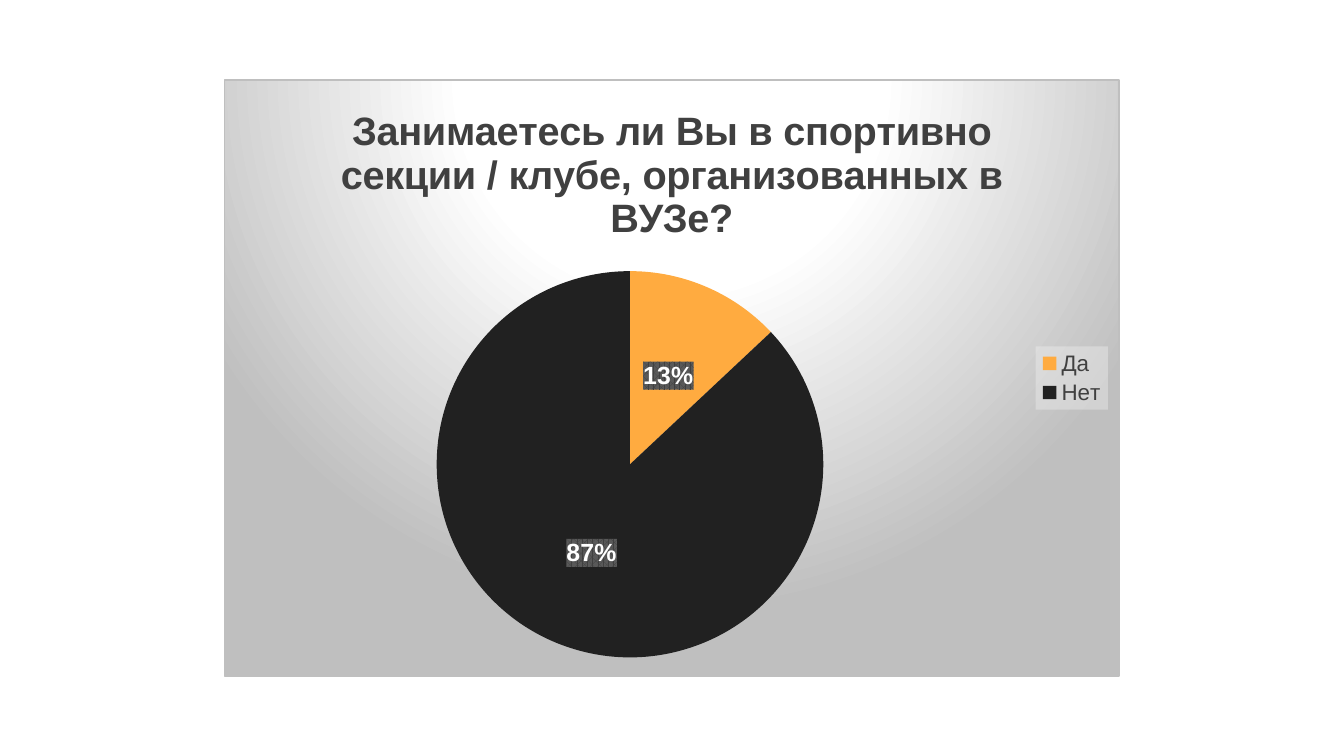
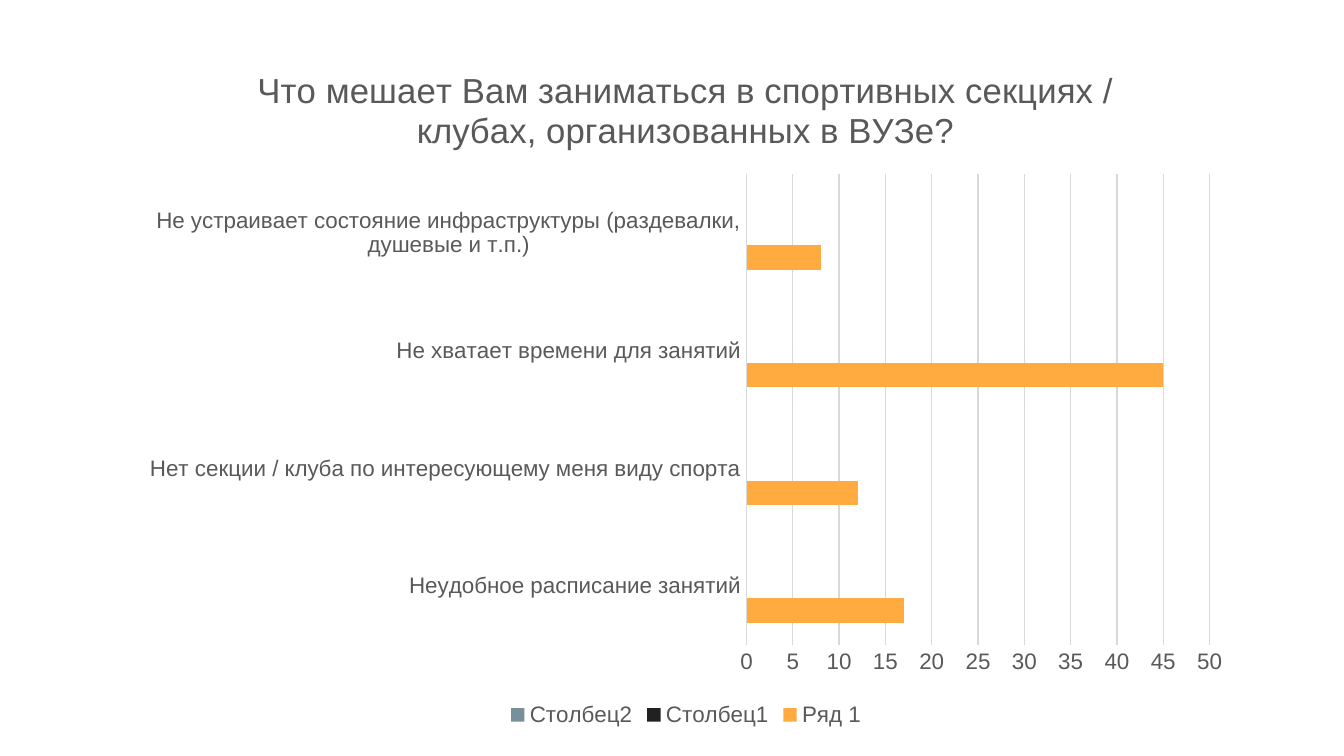
from dataclasses import dataclass

from pptx import Presentation, oxml
from pptx.chart import data
from pptx.dml.color import RGBColor
from pptx.enum import chart as kinds
from pptx.util import Cm, Pt


@dataclass(frozen=True)
class Theme:
    font: str = "Arial"
    gold: str = "FFAB40"
    ink: str = "212121"
    slate: str = "78909C"
    white: str = "FFFFFF"
    dark: str = "404040"
    gray: str = "595959"
    rule: str = "D9D9D9"
    edge: str = "BFBFBF"
    pale: str = "F2F2F2"
    base: float = 10
    text: float = 12
    label: float = 13.3
    head: float = 18.6
    bold: float = 21.3


THEME = Theme()
SPACE = 'xmlns:{0}="http://schemas.openxmlformats.org/drawingml/2006/{1}"'
NAMES = " ".join(SPACE.format(*pair) for pair in (("a", "main"), ("c", "chart")))


def rgb(tint):
    return RGBColor.from_string(tint)


def style(font, size, tint, bold=False):
    font.name = THEME.font
    font.size = Pt(size)
    font.bold = bold
    font.color.rgb = rgb(tint)


def paint(fill, tint):
    fill.solid()
    fill.fore_color.rgb = rgb(tint)


def hue(tint, alpha=100):
    return f'<a:srgbClr val="{tint}"><a:alpha val="{alpha * 1000}"/></a:srgbClr>'


def back(chart, query, fill, line="<a:ln><a:noFill/></a:ln>"):
    node = chart.element.xpath(query)[0]
    node.addprevious(oxml.parse_xml(f"<c:spPr {NAMES}>{fill}{line}</c:spPr>"))


def add_chart(slide, kind, box, cats, rows, title, size, tint, bold, place):
    source = data.CategoryChartData()
    source.categories = cats
    for name, vals in rows:
        source.add_series(name, vals)
    chart = slide.shapes.add_chart(kind, *map(Cm, box), source).chart
    style(chart.font, THEME.base, "000000")
    chart.has_title = True
    chart.chart_title.include_in_layout = False
    frame = chart.chart_title.text_frame
    frame.text = title
    style(frame.paragraphs[0].runs[0].font, size, tint, bold)
    chart.has_legend = True
    chart.legend.position = place
    chart.legend.include_in_layout = False
    style(chart.legend.font, THEME.text, tint)
    return chart


def add_pie(slide, box):
    chart = add_chart(
        slide, kinds.XL_CHART_TYPE.PIE, box, ["Да", "Нет"],
        [("Series 1", [13, 87])],
        "Занимаетесь ли Вы в спортивно секции / клубе, организованных в ВУЗе?",
        THEME.bold, THEME.dark, True, kinds.XL_LEGEND_POSITION.RIGHT)
    plot = chart.plots[0]
    plot.vary_by_categories = True
    row = plot.series[0]
    for spot, tint in enumerate((THEME.gold, THEME.ink)):
        paint(row.points[spot].format.fill, tint)
    labels = row.data_labels
    labels.show_value = False
    labels.show_percentage = True
    labels.position = kinds.XL_LABEL_POSITION.CENTER
    style(labels.font, THEME.label, THEME.white, True)

    stops = "".join(
        f'<a:gs pos="{spot * 1000}">{hue(tint)}</a:gs>'
        for spot, tint in ((0, THEME.white), (39, THEME.white), (100, THEME.edge)))
    glow = (f'<a:gradFill><a:gsLst>{stops}</a:gsLst><a:path path="circle">'
            '<a:fillToRect l="50000" t="-80000" r="50000" b="180000"/>'
            '</a:path></a:gradFill>')
    line = (f'<a:ln w="{Pt(0.75)}"><a:solidFill>{hue(THEME.edge)}'
            '</a:solidFill></a:ln>')
    mesh = (f'<a:pattFill prst="pct75"><a:fgClr>{hue(THEME.dark)}</a:fgClr>'
            f'<a:bgClr>{hue(THEME.gray)}</a:bgClr></a:pattFill>')
    veil = f"<a:solidFill>{hue(THEME.pale, 39)}</a:solidFill>"
    back(chart, "./c:txPr", glow, line)
    back(chart, ".//c:ser/c:dLbls/c:txPr", mesh)
    back(chart, ".//c:legend/c:txPr", veil)


def add_bars(slide, box):
    cats = [
        "Неудобное расписание занятий",
        "Нет секции / клуба по интересующему меня виду спорта",
        "Не хватает времени для занятий",
        "Не устраивает состояние инфраструктуры (раздевалки, душевые и т.п.)",
    ]
    void = [None] * len(cats)
    chart = add_chart(
        slide, kinds.XL_CHART_TYPE.BAR_CLUSTERED, box, cats,
        [("Ряд 1", [17, 12, 45, 8]), ("Столбец1", void), ("Столбец2", void)],
        "Что мешает Вам заниматься в спортивных секциях / клубах, "
        "организованных в ВУЗе?",
        THEME.head, THEME.gray, False, kinds.XL_LEGEND_POSITION.BOTTOM)
    plot = chart.plots[0]
    plot.gap_width = 182
    plot.vary_by_categories = False
    for row, tint in zip(plot.series, (THEME.gold, THEME.ink, THEME.slate)):
        paint(row.format.fill, tint)
    side, scale = chart.category_axis, chart.value_axis
    for axis in (side, scale):
        axis.major_tick_mark = kinds.XL_TICK_MARK.NONE
        axis.minor_tick_mark = kinds.XL_TICK_MARK.NONE
        style(axis.tick_labels.font, THEME.text, THEME.gray)
    scale.minimum_scale, scale.maximum_scale, scale.major_unit = 0, 50, 5
    scale.has_major_gridlines = True
    scale.format.line.fill.background()
    for part in (side, scale.major_gridlines):
        part.format.line.color.rgb = rgb(THEME.rule)
        part.format.line.width = Pt(0.75)


def main():
    deck = Presentation()
    deck.slide_width, deck.slide_height = Cm(25.4), Cm(14.29)
    blank = deck.slide_layouts[6]
    for draw, box in ((add_pie, (4.23, 1.5, 16.93, 11.29)),
                      (add_bars, (2.41, 0.76, 21.11, 13.08))):
        draw(deck.slides.add_slide(blank), box)
    deck.save("out.pptx")


if __name__ == "__main__":
    main()
